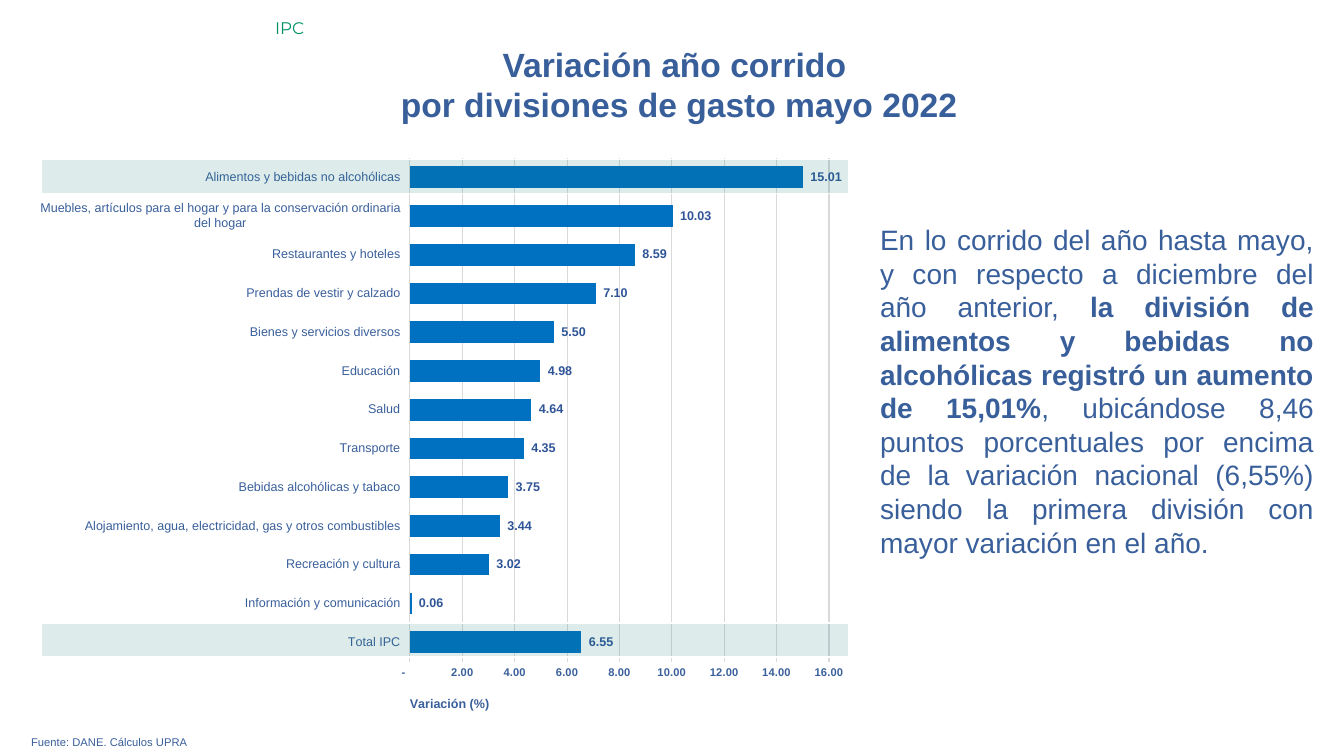
from lxml import etree
from pptx import Presentation
from pptx.chart.data import CategoryChartData
from pptx.dml.color import RGBColor
from pptx.enum.chart import XL_CHART_TYPE, XL_LABEL_POSITION, XL_TICK_LABEL_POSITION, XL_TICK_MARK
from pptx.enum.shapes import MSO_SHAPE
from pptx.enum.text import MSO_ANCHOR, PP_ALIGN
from pptx.oxml import parse_xml
from pptx.oxml.ns import nsdecls, qn
from pptx.util import Inches, Pt

BAR = XL_CHART_TYPE.BAR_CLUSTERED
OUTSIDE_END = XL_LABEL_POSITION.OUTSIDE_END
LOW = XL_TICK_LABEL_POSITION.LOW
NO_TICK = XL_TICK_MARK.NONE
RECTANGLE = MSO_SHAPE.RECTANGLE
TOP, MIDDLE = MSO_ANCHOR.TOP, MSO_ANCHOR.MIDDLE
LEFT, CENTER, JUSTIFY = PP_ALIGN.LEFT, PP_ALIGN.CENTER, PP_ALIGN.JUSTIFY

COLORS = {
    "text": "395F9B",
    "section": "009267",
    "bar": "0070C0",
    "value": "2F5597",
    "grid": "D9D9D9",
    "band": "117A76",
    "white": "FFFFFF",
}
WIDTH, HEIGHT = Inches(13.33), Inches(7.5)
NUMBER_FORMAT = '_(* #,##0.00_);_(* \\(#,##0.00\\);_(* "-"??_);_(@_)'
SPENDING = [
    ("Total IPC", 6.55),
    ("Información y comunicación", 0.06),
    ("Recreación y cultura", 3.02),
    ("Alojamiento, agua, electricidad, gas y otros combustibles", 3.44),
    ("Bebidas alcohólicas y tabaco", 3.75),
    ("Transporte", 4.35),
    ("Salud", 4.64),
    ("Educación", 4.98),
    ("Bienes y servicios diversos", 5.5),
    ("Prendas de vestir y calzado", 7.1),
    ("Restaurantes y hoteles", 8.59),
    ("Muebles, artículos para el hogar y para la conservación ordinaria del hogar", 10.03),
    ("Alimentos y bebidas no alcohólicas", 15.01),
]
FINDING = [
    ("En lo corrido del año hasta mayo, y con respecto a diciembre del año anterior, ", False),
    ("la división de alimentos y bebidas no alcohólicas registró un aumento de 15,01%", True),
    (", ubicándose 8,46 puntos porcentuales por encima de la variación nacional (6,55%) "
     "siendo la primera división con mayor variación en el año.", False),
]


def rgb(name):
    return RGBColor.from_string(COLORS[name])


def percent(left, top, width, height):
    return (int(WIDTH * left / 100), int(HEIGHT * top / 100),
            int(WIDTH * width / 100), int(HEIGHT * height / 100))


def style_font(font, size, color="text", bold=False, face="Arial"):
    font.size, font.bold, font.name = Pt(size), bold, face
    font.color.rgb = rgb(color)


def write(holder, area, paragraphs, align=LEFT, anchor=TOP, **font):
    holder.left, holder.top, holder.width, holder.height = percent(*area)
    frame = holder.text_frame
    frame.word_wrap = True
    frame.vertical_anchor = anchor
    for index, runs in enumerate(paragraphs):
        paragraph = frame.add_paragraph() if index else frame.paragraphs[0]
        paragraph.alignment = align
        paragraph.line_spacing = 1.0
        paragraph.space_before = Pt(0)
        for words, bold in runs:
            run = paragraph.add_run()
            run.text = words
            style_font(run.font, bold=bold, **font)


def add_text(slide, area, paragraphs, **style):
    write(slide.shapes.add_textbox(*percent(*area)), area, paragraphs, **style)


def manual_layout(inner=False, **shares):
    target = '<c:layoutTarget val="inner"/>' if inner else ""
    modes = '<c:xMode val="edge"/><c:yMode val="edge"/>'
    values = "".join(f'<c:{key} val="{share}"/>' for key, share in shares.items())
    return parse_xml(f'<c:layout {nsdecls("c")}><c:manualLayout>{target}{modes}{values}'
                     '</c:manualLayout></c:layout>')


def place(parent, layout, position):
    for automatic in parent.findall(qn("c:layout")):
        parent.remove(automatic)
    parent.insert(position, layout)


def format_axes(chart):
    divisions, variation = chart.category_axis, chart.value_axis
    divisions.tick_label_position = LOW
    divisions.has_major_gridlines = False
    divisions.format.line.color.rgb = rgb("grid")
    divisions.format.line.width = Pt(0.75)
    style_font(divisions.tick_labels.font, 9)

    variation.minimum_scale, variation.maximum_scale, variation.major_unit = 0, 16, 2
    variation.format.line.fill.background()
    variation.major_gridlines.format.line.color.rgb = rgb("grid")
    variation.major_gridlines.format.line.width = Pt(0.75)
    variation.tick_labels.number_format = NUMBER_FORMAT
    variation.tick_labels.number_format_is_linked = False
    style_font(variation.tick_labels.font, 8, bold=True)
    for axis in (divisions, variation):
        axis.major_tick_mark = axis.minor_tick_mark = NO_TICK

    caption = variation.axis_title.text_frame.paragraphs[0].add_run()
    caption.text = "Variación (%)"
    style_font(caption.font, 9, bold=True)
    place(variation.axis_title._element, manual_layout(x=0.45, y=0.96), 1)


def add_spending_chart(slide, area):
    data = CategoryChartData(number_format="0.00")
    data.categories = [division for division, _ in SPENDING]
    data.add_series("Series 1", [value for _, value in SPENDING])
    chart = slide.shapes.add_chart(BAR, *percent(*area), data).chart
    chart.has_legend = chart.has_title = False
    style_font(chart.font, 10.5)
    format_axes(chart)

    bars = chart.plots[0]
    bars.gap_width = 79
    bars.vary_by_categories = False
    bars.series[0].format.fill.solid()
    bars.series[0].format.fill.fore_color.rgb = rgb("bar")
    bars.has_data_labels = True
    labels = bars.data_labels
    labels.show_value = True
    labels.position = OUTSIDE_END
    labels.number_format = NUMBER_FORMAT
    labels.number_format_is_linked = False
    style_font(labels.font, 9, "value", bold=True)
    plot_area = chart._chartSpace.chart.plotArea
    place(plot_area, manual_layout(inner=True, x=0.453, y=0.036, w=0.521, h=0.869), 0)


def add_band(slide, area):
    band = slide.shapes.add_shape(RECTANGLE, *percent(*area))
    band.shadow.inherit = False
    band.fill.solid()
    band.fill.fore_color.rgb = rgb("band")
    tint = band.fill._xPr.find(qn("a:solidFill"))[0]
    etree.SubElement(tint, qn("a:alpha")).set("val", "14000")
    band.line.color.rgb = rgb("white")
    band.line.width = Pt(1)


def main():
    deck = Presentation()
    deck.slide_width, deck.slide_height = WIDTH, HEIGHT
    slide = deck.slides.add_slide(deck.slide_layouts[5])
    heading = [[("Variación año corrido ", True)], [("por divisiones de gasto mayo 2022", True)]]
    write(slide.shapes.title, (10.88, 5.07, 79.29, 12.13), heading,
          align=CENTER, anchor=MIDDLE, size=24)
    add_text(slide, (1.58, 96.67, 96.85, 3.2), [[("Fuente: DANE. Cálculos UPRA", False)]],
             align=JUSTIFY, size=8)
    add_text(slide, (64.74, 28.8, 33.76, 46.27), [FINDING], align=JUSTIFY, size=20)
    add_text(slide, (19.73, 1.73, 80.27, 4), [[("IPC", False)]],
             size=12, color="section", face="Montserrat")
    add_spending_chart(slide, (3, 18.13, 60.24, 76.67))
    for row in (82.4, 21.07):
        add_band(slide, (3.08, row, 60.09, 4.53))
    deck.save("out.pptx")


if __name__ == "__main__":
    main()
